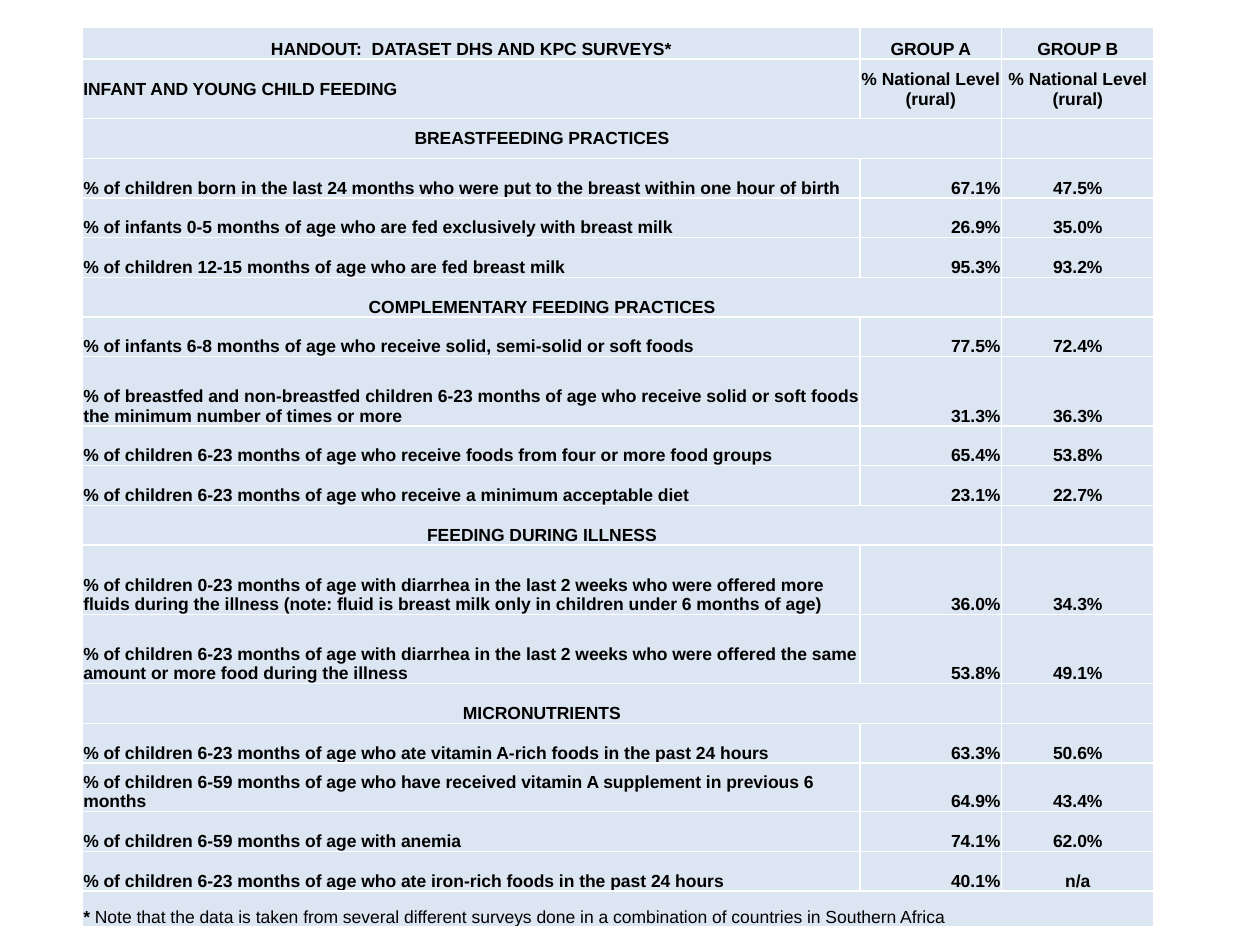
from lxml import etree
from pptx import Presentation
from pptx import util as u
from pptx.dml.color import RGBColor
from pptx.enum import text
from pptx.oxml import ns

COLORS = {"cell": "DCE6F2", "rule": "FFFFFF", "ink": "000000"}
FONT = {"name": "Arial", "size": u.Pt(10), "bold": True}
MARGINS = {"margin_left": u.Pt(0.6), "margin_right": u.Pt(0.6),
           "margin_top": u.Pt(0.6), "margin_bottom": 0}
LEFT, CENTER, RIGHT = text.PP_ALIGN.LEFT, text.PP_ALIGN.CENTER, text.PP_ALIGN.RIGHT
MIDDLE, BOTTOM = text.MSO_ANCHOR.MIDDLE, text.MSO_ANCHOR.BOTTOM

COLUMN_WIDTHS = [444.4, 80.9, 87.2]
LINE, TALL = 22.7, 39.6
HEADINGS = [
    (18.5, BOTTOM, CENTER, ["HANDOUT:  DATASET DHS AND KPC SURVEYS*", "GROUP A", "GROUP B"]),
    (34, MIDDLE, LEFT, ["INFANT AND YOUNG CHILD FEEDING",
                        "% National Level (rural)", "% National Level (rural)"]),
]
SECTIONS = [
    ("BREASTFEEDING PRACTICES", MIDDLE, [
        (LINE, "% of children born in the last 24 months who were put to the breast "
               "within one hour of birth", "67.1%", "47.5%"),
        (LINE, "% of infants 0-5 months of age who are fed exclusively with breast milk",
         "26.9%", "35.0%"),
        (LINE, "% of children 12-15 months of age who are fed breast milk", "95.3%", "93.2%"),
    ]),
    ("COMPLEMENTARY FEEDING PRACTICES", BOTTOM, [
        (LINE, "% of infants 6-8 months of age who receive solid, semi-solid or soft foods",
         "77.5%", "72.4%"),
        (TALL, "% of breastfed and non-breastfed children 6-23 months of age who receive "
               "solid or soft foods the minimum number of times or more", "31.3%", "36.3%"),
        (LINE, "% of children 6-23 months of age who receive foods from four or more food groups",
         "65.4%", "53.8%"),
        (LINE, "% of children 6-23 months of age who receive a minimum acceptable diet",
         "23.1%", "22.7%"),
    ]),
    ("FEEDING DURING ILLNESS", BOTTOM, [
        (TALL, "% of children 0-23 months of age with diarrhea in the last 2 weeks who were "
               "offered more fluids during the illness (note: fluid is breast milk only in "
               "children under 6 months of age)", "36.0%", "34.3%"),
        (TALL, "% of children 6-23 months of age with diarrhea in the last 2 weeks who were "
               "offered the same amount or more food during the illness", "53.8%", "49.1%"),
    ]),
    ("MICRONUTRIENTS", BOTTOM, [
        (LINE, "% of children 6-23 months of age who ate vitamin A-rich foods in the past 24 hours",
         "63.3%", "50.6%"),
        (27.8, "% of children 6-59 months of age who have received vitamin A supplement in "
               "previous 6 months", "64.9%", "43.4%"),
        (LINE, "% of children 6-59 months of age with anemia", "74.1%", "62.0%"),
        (LINE, "% of children 6-23 months of age who ate iron-rich foods in the past 24 hours",
         "40.1%", "n/a"),
    ]),
]
FOOTNOTE_HEIGHT = 20.7
FOOTNOTE = ("Note that the data is taken from several different surveys done in a "
            "combination of countries in Southern Africa")


def set_all(target, values):
    """Set every attribute named in values on target."""
    for name, value in values.items():
        setattr(target, name, value)


def write(cell, words, align, anchor=BOTTOM, **font):
    """Append one run of formatted words to a cell."""
    cell.vertical_anchor = anchor
    line = cell.text_frame.paragraphs[0]
    line.alignment = align
    run = line.add_run()
    run.text = words
    set_all(run.font, {**FONT, **font})
    run.font.color.rgb = RGBColor.from_string(COLORS["ink"])


def style_cell(cell):
    """Give a cell its margins, white rules and fill."""
    set_all(cell, MARGINS)
    properties = cell._tc.get_or_add_tcPr()
    for side in ("a:lnL", "a:lnR", "a:lnT", "a:lnB"):
        rule = etree.SubElement(properties, ns.qn(side), w=str(u.Pt(1)))
        fill = etree.SubElement(rule, ns.qn("a:solidFill"))
        etree.SubElement(fill, ns.qn("a:srgbClr"), val=COLORS["rule"])
    cell.fill.solid()
    cell.fill.fore_color.rgb = RGBColor.from_string(COLORS["cell"])


def survey_rows():
    """List each row as height, merged column count, anchor, alignments and words."""
    rows = [(height, 1, anchor, [first, CENTER, CENTER], words)
            for height, anchor, first, words in HEADINGS]
    for section, anchor, indicators in SECTIONS:
        rows.append((LINE, 2, anchor, [CENTER], [section]))
        rows += [(height, 1, BOTTOM, [LEFT, RIGHT, CENTER], words)
                 for height, *words in indicators]
    return rows + [(FOOTNOTE_HEIGHT, 3, BOTTOM, [LEFT], ["* "])]


def add_survey_table(slide, left, top):
    """Place the survey table with its top left corner at the given point."""
    rows = survey_rows()
    frame = slide.shapes.add_table(
        len(rows), len(COLUMN_WIDTHS), u.Pt(left), u.Pt(top),
        u.Pt(sum(COLUMN_WIDTHS)), u.Pt(sum(row[0] for row in rows)))
    survey = frame.table
    set_all(survey, {"first_row": False, "horz_banding": False})
    for column, width in zip(survey.columns, COLUMN_WIDTHS):
        column.width = u.Pt(width)
    for cell in survey.iter_cells():
        style_cell(cell)
    for index, (height, span, anchor, aligns, words) in enumerate(rows):
        survey.rows[index].height = u.Pt(height)
        if span > 1:
            survey.cell(index, 0).merge(survey.cell(index, span - 1))
        for column, (align, content) in enumerate(zip(aligns, words)):
            write(survey.cell(index, column), content, align, anchor)
    write(survey.cell(len(rows) - 1, 0), FOOTNOTE, LEFT, bold=False)


def main():
    """Build and save the handout."""
    deck = Presentation()
    set_all(deck, {"slide_width": u.Pt(720), "slide_height": u.Pt(540)})
    add_survey_table(deck.slides.add_slide(deck.slide_layouts[6]), 47, 15.3)
    deck.save("out.pptx")


if __name__ == "__main__":
    main()
